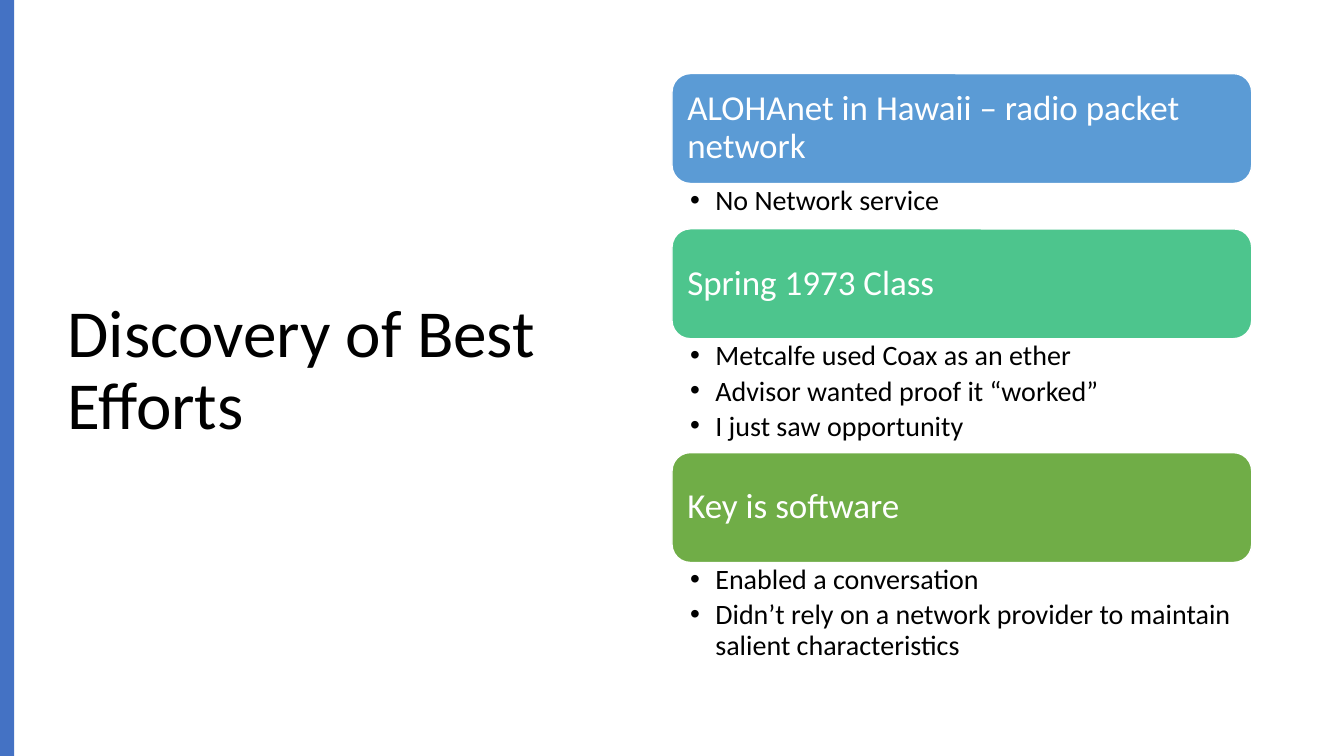
from pptx import Presentation, util as u
from pptx.dml.color import RGBColor
from pptx.enum import shapes, text
from lxml import etree

WIDE, HIGH = 13.33, 7.5
TITLE = "Discovery of Best Efforts"
BAR = "4472C4"
TOPICS = [
    ("ALOHAnet in Hawaii – radio packet network", "5B9BD5", 0.45,
     ["No Network service"]),
    ("Spring 1973 Class", "4DC58D", 1.13,
     ["Metcalfe used Coax as an ether",
      "Advisor wanted proof it “worked”",
      "I just saw opportunity"]),
    ("Key is software", "70AD47", 1.08,
     ["Enabled a conversation",
      "Didn’t rely on a network provider to maintain salient characteristics"]),
]
LEFT, TOP, SPAN, HEAD = WIDE / 2, 0.73, 5.75, 1.09
NS = "{http://schemas.openxmlformats.org/drawingml/2006/main}"


def tint(code):
    return RGBColor.from_string(code)


def put(obj, vals):
    for key, val in vals.items():
        setattr(obj, key, val)


def place(shape, *box):
    put(shape, dict(zip(("left", "top", "width", "height"), map(u.Inches, box))))


def write(shape, lines, size, color, anchor, pad, after=0):
    frame = shape.text_frame
    frame.text = "\n".join(lines)
    put(frame, {"word_wrap": True, "auto_size": text.MSO_AUTO_SIZE.NONE,
                "vertical_anchor": anchor})
    sides = ("margin_left", "margin_top", "margin_right", "margin_bottom")
    put(frame, dict(zip(sides, map(u.Inches, pad))))
    for para in frame.paragraphs:
        put(para, {"alignment": text.PP_ALIGN.LEFT, "line_spacing": 0.9,
                   "space_before": u.Pt(0), "space_after": u.Pt(after)})
        font = para.runs[0].font
        put(font, {"name": "Calibri", "size": u.Pt(size), "bold": False})
        font.color.rgb = tint(color)


def bullet(para):
    props = para._p.get_or_add_pPr()
    props.set("marL", str(u.Inches(0.25)))
    props.set("indent", str(u.Inches(-0.25)))
    etree.SubElement(props, NS + "buFont", typeface="Arial")
    etree.SubElement(props, NS + "buChar", char="•")


def block(slide, kind, box, fill):
    shape = slide.shapes.add_shape(kind, 0, 0, 0, 0)
    place(shape, *box)
    shape.shadow.inherit = False
    shape.fill.solid()
    shape.fill.fore_color.rgb = tint(fill)
    return shape


def main():
    deck = Presentation()
    put(deck, {"slide_width": u.Inches(WIDE), "slide_height": u.Inches(HIGH)})
    slide = deck.slides.add_slide(deck.slide_layouts[4])
    name, *lists = slide.placeholders
    mid, high = text.MSO_ANCHOR.MIDDLE, text.MSO_ANCHOR.TOP

    place(name, 0.57, 0.68, 5.67, 6.02)
    write(name, [TITLE], 48, "000000", mid, (0.1, 0.05, 0.1, 0.05))
    kinds = shapes.MSO_SHAPE
    bar = block(slide, kinds.RECTANGLE, (0, 0, 0.14, HIGH), BAR)
    bar.line.fill.background()

    y = TOP
    for (head, fill, tall, items), body in zip(TOPICS, lists):
        card = block(slide, kinds.ROUNDED_RECTANGLE, (LEFT, y, SPAN, HEAD), fill)
        card.line.color.rgb = tint("FFFFFF")
        card.line.width = u.Pt(1)
        write(card, [head], 25, "FFFFFF", mid, [0.1] * 4)
        y += HEAD
        place(body, LEFT, y, SPAN, tall)
        write(body, items, 20, "000000", high, (0.18, 0.03, 0.19, 0.03), 3.5)
        for para in body.text_frame.paragraphs:
            bullet(para)
        y += tall

    for spare in lists[len(TOPICS):]:
        spare.element.getparent().remove(spare.element)
    deck.save("out.pptx")


if __name__ == "__main__":
    main()
